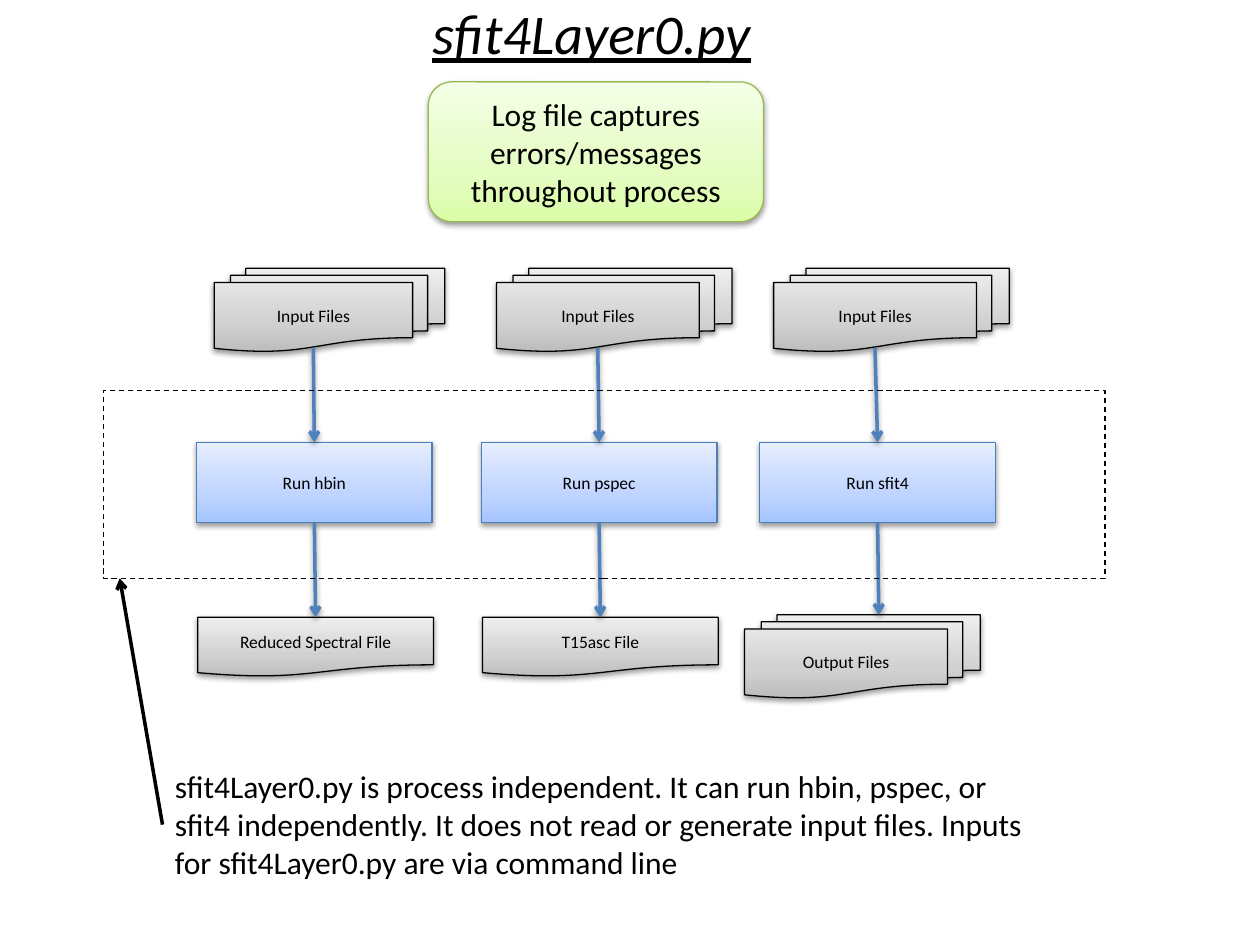
from copy import deepcopy

from lxml import etree
from pptx import Presentation
from pptx.dml.color import RGBColor
from pptx.enum.dml import MSO_LINE
from pptx.enum.shapes import MSO_CONNECTOR, MSO_SHAPE
from pptx.enum.text import MSO_ANCHOR, MSO_AUTO_SIZE, PP_ALIGN
from pptx.oxml.ns import qn
from pptx.util import Inches, Pt

PROCESS = MSO_SHAPE.FLOWCHART_PROCESS
DOCUMENT = MSO_SHAPE.FLOWCHART_DOCUMENT
DOCUMENTS = MSO_SHAPE.FLOWCHART_MULTIDOCUMENT
ROUNDED = MSO_SHAPE.ROUNDED_RECTANGLE
RECTANGLE = MSO_SHAPE.RECTANGLE
STRAIGHT = MSO_CONNECTOR.STRAIGHT
CENTER, LEFT = PP_ALIGN.CENTER, PP_ALIGN.LEFT
TOP, MIDDLE = MSO_ANCHOR.TOP, MSO_ANCHOR.MIDDLE

FONT = "Calibri"
COLORS = {
    "black": "000000",
    "arrow": "4F81BD",
    "process line": "4B7EBC",
    "log line": "98B955",
}
# Gradient colours from bottom to top
GRADIENTS = {
    "process": ("A4C4FF", "BFD4FF", "E6EEFF"),
    "file": ("BDBDBD", "D1D1D1", "EEEEEE"),
    "log": ("DAFDA7", "E4FCC2", "F5FFE7"),
}
GRADIENT_POSITIONS = (0, 0.35, 1)


def color(name):
    return RGBColor.from_string(COLORS[name])


def set_text(shape, text, size, align=CENTER, anchor=MIDDLE):
    frame = shape.text_frame
    frame.text = text
    frame.word_wrap = True
    frame.auto_size = MSO_AUTO_SIZE.NONE
    frame.vertical_anchor = anchor
    paragraph = frame.paragraphs[0]
    paragraph.alignment = align
    font = paragraph.runs[0].font
    font.name, font.size = FONT, Pt(size)
    font.color.rgb = color("black")
    return font


def set_gradient(shape, stop_colors):
    shape.fill.gradient()
    shape.fill.gradient_angle = 90
    stop_list = shape._element.spPr.find(".//" + qn("a:gsLst"))
    stop_list.insert(1, deepcopy(stop_list[0]))
    for stop, position, value in zip(shape.fill.gradient_stops, GRADIENT_POSITIONS, stop_colors):
        stop.position = position
        stop.color.rgb = RGBColor.from_string(value)


def add_soft_shadow(effects):
    shadow = etree.SubElement(effects, qn("a:outerShdw"), blurRad="40000", dist="20000",
                              dir="5400000", rotWithShape="0")
    black = etree.SubElement(shadow, qn("a:srgbClr"), val=COLORS["black"])
    etree.SubElement(black, qn("a:alpha"), val="38000")


def add_box(slide, kind, box, text, gradient, line="black", size=10):
    shape = slide.shapes.add_shape(kind, *map(Inches, box))
    set_gradient(shape, GRADIENTS[gradient])
    shape.line.color.rgb = color(line)
    shape.line.width = Pt(0.75)
    shape.shadow.inherit = False
    add_soft_shadow(shape._element.spPr.find(qn("a:effectLst")))
    set_text(shape, text, size)


def add_arrow(slide, start, end, line="arrow", shadow=True):
    connector = slide.shapes.add_connector(STRAIGHT, *map(Inches, (*start, *end)))
    connector.line.color.rgb = color(line)
    connector.line.width = Pt(2)
    etree.SubElement(connector.line._get_or_add_ln(), qn("a:tailEnd"), type="arrow")
    effects = etree.SubElement(connector._element.spPr, qn("a:effectLst"))
    if shadow:
        add_soft_shadow(effects)


def add_title(slide, box):
    title = slide.shapes.title
    title.left, title.top, title.width, title.height = map(Inches, box)
    font = set_text(title, "sfit4Layer0.py", 32, anchor=TOP)
    font.italic = font.underline = True


def add_step(slide, process_box, process_text, input_box, output_kind, output_box, output_text):
    """One column: input files, the process, and what it writes."""
    left, top, width, height = process_box
    center = left + width / 2
    input_left, input_top, input_width, input_height = input_box
    # The front sheet covers the left 86% of a stack of documents
    input_center = input_left + input_width * 0.43
    add_box(slide, PROCESS, process_box, process_text, "process", "process line")
    add_box(slide, DOCUMENTS, input_box, "Input Files", "file")
    add_box(slide, output_kind, output_box, output_text, "file")
    add_arrow(slide, (input_center, input_top + input_height - 0.03), (center, top))
    add_arrow(slide, (center, top + height), (center + 0.01, output_box[1]))


def add_scope(slide, box):
    """Dashed frame around the processes."""
    frame = slide.shapes.add_shape(RECTANGLE, *map(Inches, box))
    frame.fill.background()
    frame.line.color.rgb = color("black")
    frame.line.width = Pt(0.75)
    frame.line.dash_style = MSO_LINE.DASH
    frame.shadow.inherit = False


def add_note(slide, box, target):
    note = slide.shapes.add_textbox(*map(Inches, box))
    set_text(note, "sfit4Layer0.py is process independent. It can run hbin, pspec, or sfit4 "
             "independently. It does not read or generate input files. Inputs for "
             "sfit4Layer0.py are via command line", 18, LEFT, TOP)
    left, top, _, height = box
    add_arrow(slide, (left, top + height / 2), target, "black", shadow=False)


def main():
    presentation = Presentation()
    presentation.slide_width, presentation.slide_height = Inches(10), Inches(7.5)
    slide = presentation.slides.add_slide(presentation.slide_layouts[5])

    add_title(slide, (2.95, -0.06, 3.49, 0.64))
    add_box(slide, ROUNDED, (3.4, 0.65, 2.66, 1.11),
            "Log file captures errors/messages throughout process", "log", "log line", 18)

    # Columns: process left, name, input left and width, output kind, box and name
    steps = (
        (1.56, "Run hbin", 1.7, 1.83, DOCUMENT, (1.57, 4.9, 1.87, 0.47), "Reduced Spectral File"),
        (3.82, "Run pspec", 3.94, 1.87, DOCUMENT, (3.83, 4.9, 1.87, 0.47), "T15asc File"),
        (6.03, "Run sfit4", 6.14, 1.87, DOCUMENTS, (5.91, 4.88, 1.87, 0.66), "Output Files"),
    )
    for left, name, input_left, input_width, *output in steps:
        add_step(slide, (left, 3.51, 1.87, 0.64), name,
                 (input_left, 2.13, input_width, 0.66), *output)

    add_scope(slide, (0.82, 3.1, 7.95, 1.49))
    add_note(slide, (1.29, 6.04, 6.94, 1.01), (0.95, 4.59))
    presentation.save("out.pptx")


if __name__ == "__main__":
    main()
